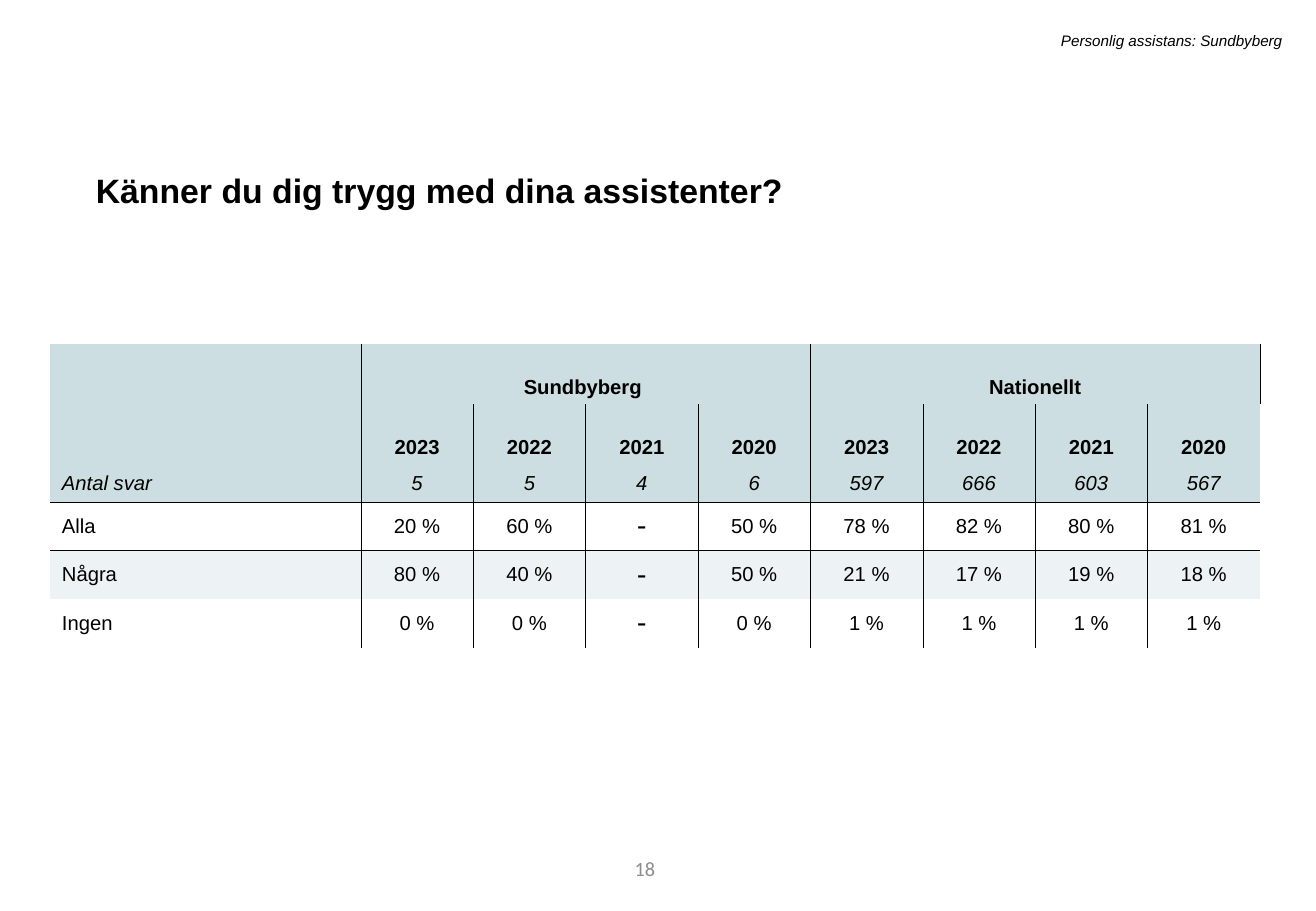
"""Builds a survey slide with one table of answers per year."""
from dataclasses import dataclass

import lxml.etree
import pptx
import pptx.dml.color
import pptx.enum.text
import pptx.oxml.ns
import pptx.util

Inches = pptx.util.Inches
Pt = pptx.util.Pt
ALIGN = pptx.enum.text.PP_ALIGN
ANCHOR = pptx.enum.text.MSO_ANCHOR
qn = pptx.oxml.ns.qn


@dataclass(frozen=True)
class Theme:
    """Colours, fonts and type sizes of the slide."""
    text: str = "000000"
    muted: str = "8C8C8C"
    header_fill: str = "CCDEE1"
    band_fill: str = "EDF3F4"
    font: str = "Arial"
    second_font: str = "Calibri"
    title_size: int = 20
    dash_size: int = 18
    body_size: int = 12
    caption_size: int = 9
    rule_width: float = 0.25


THEME = Theme()
NO_STYLE = "{2D5ABB26-0587-4C30-8999-92F81FD0307C}"
YEARS = ["2023", "2022", "2021", "2020"]
ROWS = [
    ["", "Sundbyberg ", "", "", "", "Nationellt", "", "", ""],
    ["", *YEARS, *YEARS],
    ["Antal svar", "5", "5", "4", "6", "597", "666", "603", "567"],
    ["Alla", "20 %", "60 %", "-", "50 %", "78 %", "82 %", "80 %", "81 %"],
    ["Några", "80 %", "40 %", "-", "50 %", "21 %", "17 %", "19 %", "18 %"],
    ["Ingen", "0 %", "0 %", "-", "0 %", "1 %", "1 %", "1 %", "1 %"],
]
ROW_HEIGHTS = [0.5, 0.5, 0.3, 0.4, 0.4, 0.4]
TABLE_WIDTH = 9.96
LABEL_WIDTH = 2.56
GROUP_COLUMNS = (1, 5)
COUNT_ROW = 2
BAND_ROW = 4


def style_paragraph(paragraph, size, font=THEME.font, color=THEME.text,
                    bold=False, italic=False, align=ALIGN.LEFT):
    """Set the alignment and font of a paragraph."""
    paragraph.alignment = align
    paragraph.font.name = font
    paragraph.font.size = Pt(size)
    paragraph.font.bold = bold
    paragraph.font.italic = italic
    paragraph.font.color.rgb = pptx.dml.color.RGBColor.from_string(color)


def add_text(slide, text, left, top, width, height, anchor=ANCHOR.TOP, **style):
    """Add a one-paragraph text box and return its paragraph."""
    box = slide.shapes.add_textbox(
        Inches(left), Inches(top), Inches(width), Inches(height))
    frame = box.text_frame
    frame.word_wrap = True
    frame.vertical_anchor = anchor
    paragraph = frame.paragraphs[0]
    paragraph.text = text
    style_paragraph(paragraph, **style)
    return paragraph


def set_borders(cell, sides):
    """Draw thin rules on the named sides of a cell."""
    properties = cell._tc.get_or_add_tcPr()
    for position, side in enumerate(sides):
        line = lxml.etree.Element(
            qn(f"a:ln{side}"), w=str(Pt(THEME.rule_width)))
        fill = lxml.etree.SubElement(line, qn("a:solidFill"))
        lxml.etree.SubElement(fill, qn("a:srgbClr"), val=THEME.text)
        properties.insert(position, line)


def border_sides(cell, row, column):
    """List the ruled sides of a cell in schema order."""
    sides = []
    if not cell.is_spanned:
        if column > 0:
            sides.append("L")
        if row == 0 or column < len(ROWS[0]) - 1:
            sides.append("R")
    if row == COUNT_ROW + 1:
        sides.append("T")
    if row == COUNT_ROW:
        sides.append("B")
    return sides


def fill_cell(cell, row):
    """Fill a cell according to its row."""
    if row <= COUNT_ROW or row == BAND_ROW:
        color = THEME.header_fill if row <= COUNT_ROW else THEME.band_fill
        cell.fill.solid()
        cell.fill.fore_color.rgb = pptx.dml.color.RGBColor.from_string(color)
    else:
        cell.fill.background()


def write_cell(cell, text, row, column):
    """Write and style the text of a cell."""
    is_dash = text == "-"
    is_heading = row < COUNT_ROW
    cell.vertical_anchor = ANCHOR.BOTTOM if is_heading else ANCHOR.MIDDLE
    paragraph = cell.text_frame.paragraphs[0]
    paragraph.text = text
    style_paragraph(
        paragraph,
        size=THEME.dash_size if is_dash else THEME.body_size,
        font=THEME.second_font if is_dash else THEME.font,
        bold=is_heading, italic=row == COUNT_ROW,
        align=ALIGN.CENTER if column else ALIGN.LEFT)


def add_answer_table(slide):
    """Add the table of answers by area and year."""
    column_count = len(ROWS[0])
    table = slide.shapes.add_table(
        len(ROWS), column_count, Inches(0.41), Inches(2.83),
        Inches(TABLE_WIDTH), Inches(sum(ROW_HEIGHTS))).table
    table.first_row = False
    table.horz_banding = False
    table._tbl.tblPr.find(qn("a:tableStyleId")).text = NO_STYLE

    year_width = (TABLE_WIDTH - LABEL_WIDTH) / (column_count - 1)
    for column, table_column in enumerate(table.columns):
        table_column.width = Inches(year_width if column else LABEL_WIDTH)
    for table_row, height in zip(table.rows, ROW_HEIGHTS):
        table_row.height = Inches(height)
    for first in GROUP_COLUMNS:
        table.cell(0, first).merge(table.cell(0, first + len(YEARS) - 1))

    for row, texts in enumerate(ROWS):
        for column, text in enumerate(texts):
            cell = table.cell(row, column)
            fill_cell(cell, row)
            write_cell(cell, text, row, column)
            set_borders(cell, border_sides(cell, row, column))


def main():
    """Build and save the slide."""
    presentation = pptx.Presentation()
    presentation.slide_width = Inches(10.83)
    presentation.slide_height = Inches(7.5)
    slide = presentation.slides.add_slide(presentation.slide_layouts[6])

    add_text(slide, "18", 3.05, 6.95, 2.44, 0.4, anchor=ANCHOR.MIDDLE,
             size=THEME.body_size, font=THEME.second_font,
             color=THEME.muted, align=ALIGN.RIGHT)
    title = add_text(slide, "Känner du dig trygg med dina assistenter?",
                     0.69, 1.28, 9.4, 0.47, size=THEME.title_size, bold=True)
    title.line_spacing = 1.2
    title.space_before = Pt(10)
    add_answer_table(slide)
    add_text(slide, "Personlig assistans: Sundbyberg", 1.79, 0.21, 8.86, 0.25,
             size=THEME.caption_size, italic=True, align=ALIGN.RIGHT)
    presentation.save("out.pptx")


if __name__ == "__main__":
    main()
